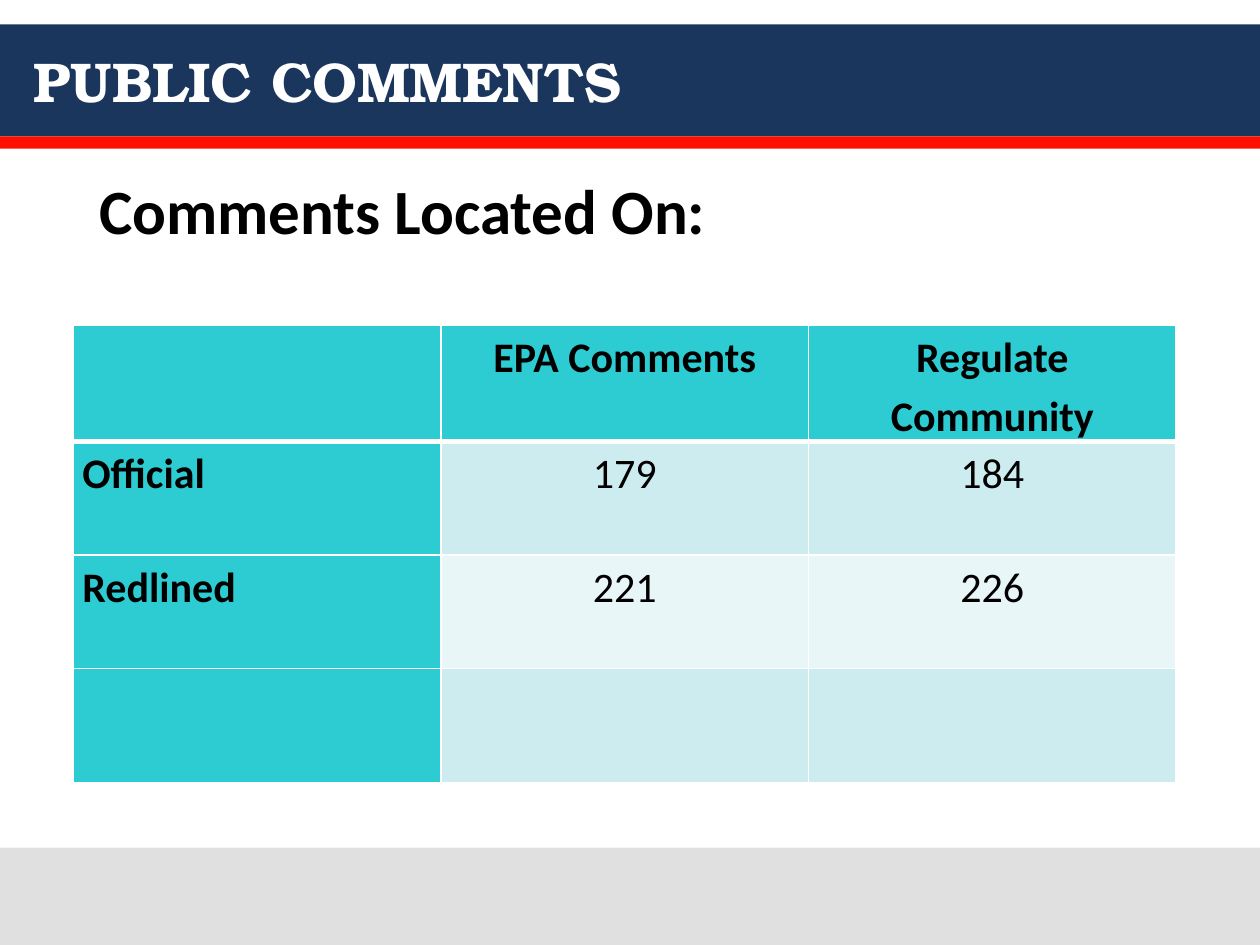
import pptx
import pptx.util
import pptx.dml.color
import pptx.enum.shapes
import pptx.enum.text
import pptx.oxml
import pptx.oxml.ns

Cm = pptx.util.Cm
Pt = pptx.util.Pt
ALIGN = pptx.enum.text.PP_ALIGN
ANCHOR = pptx.enum.text.MSO_ANCHOR

WIDE, HIGH = 25.4, 19.05
NAVY, RED, GREY = "1B365D", "FF0F00", "E0E0E0"
TEAL, PALE, LIGHT = "2DCCD3", "CDECEF", "E8F6F7"
WHITE, BLACK = "FFFFFF", "000000"

ROWS = [
    ["", "EPA Comments", "Regulate Community"],
    ["Official", "179", "184"],
    ["Redlined", "221", "226"],
    ["", "", ""],
]


def color(code):
    return pptx.dml.color.RGBColor.from_string(code)


def style(para, face, size, code, bold):
    for run in para.runs:
        font = run.font
        font.name, font.size, font.bold = face, Pt(size), bold
        font.color.rgb = color(code)


def band(slide, left, top, width, height, code):
    rect = slide.shapes.add_shape(
        pptx.enum.shapes.MSO_SHAPE.RECTANGLE,
        Cm(left), Cm(top), Cm(width), Cm(height))
    rect.shadow.inherit = False
    rect.fill.solid()
    rect.fill.fore_color.rgb = color(code)
    rect.line.fill.background()


def label(slide, left, top, width, height, text, face, size, code, anchor):
    box = slide.shapes.add_textbox(Cm(left), Cm(top), Cm(width), Cm(height))
    frame = box.text_frame
    frame.word_wrap = True
    frame.vertical_anchor = anchor
    frame.text = text
    style(frame.paragraphs[0], face, size, code, True)


def header(slide, left, top, width, height):
    stripe = 0.25
    deep = height - stripe
    band(slide, left, top, width, deep, NAVY)
    band(slide, left, top + deep, width, stripe, RED)
    label(slide, left + 0.43, top, width - 0.86, deep, "PUBLIC COMMENTS",
          "TeX Gyre Bonum", 32, WHITE, ANCHOR.MIDDLE)


def border(cell, side, points):
    line = pptx.oxml.parse_xml(
        f'<a:ln{side} {pptx.oxml.ns.nsdecls("a")} w="{Pt(points)}">'
        f'<a:solidFill><a:srgbClr val="{WHITE}"/></a:solidFill></a:ln{side}>')
    cell._tc.get_or_add_tcPr().append(line)


def fill_cell(cell, text, row, col):
    # Borders go before the fill; the rule under the head row is thicker
    for side in "LRTB":
        thick = (row, side) in ((0, "B"), (1, "T"))
        border(cell, side, 3 if thick else 1)
    head = row == 0 or col == 0
    cell.fill.solid()
    cell.fill.fore_color.rgb = color(
        TEAL if head else PALE if row % 2 else LIGHT)
    cell.margin_left = cell.margin_right = Cm(0.18)
    cell.margin_top = cell.margin_bottom = 0
    if text:
        cell.text_frame.text = text
        para = cell.text_frame.paragraphs[0]
        para.alignment = ALIGN.CENTER if col else ALIGN.LEFT
        para.line_spacing = 1.15
        para.space_after = Pt(10)
        style(para, "Calibri", 24, BLACK, head)


def grid(slide, left, top, width, height):
    count, across = len(ROWS), len(ROWS[0])
    table = slide.shapes.add_table(
        count, across, Cm(left), Cm(top), Cm(width), Cm(height)).table
    table.first_col = True
    for col in table.columns:
        col.width = Cm(width / across)
    for row, texts in enumerate(ROWS):
        table.rows[row].height = Cm(height / count)
        for col, text in enumerate(texts):
            fill_cell(table.cell(row, col), text, row, col)


def main():
    deck = pptx.Presentation()
    deck.slide_width, deck.slide_height = Cm(WIDE), Cm(HIGH)
    slide = deck.slides.add_slide(deck.slide_layouts[6])

    # Title bar and footer
    header(slide, 0, 0.49, WIDE, 2.51)
    band(slide, 0, 17.09, WIDE, HIGH - 17.09, GREY)

    # Heading and table
    label(slide, 1.75, 3.33, 23.2, 1.9, "Comments Located On:",
          "Calibri", 36, BLACK, ANCHOR.TOP)
    grid(slide, 1.48, 6.56, 22.23, 9.17)

    deck.save("out.pptx")


if __name__ == "__main__":
    main()
